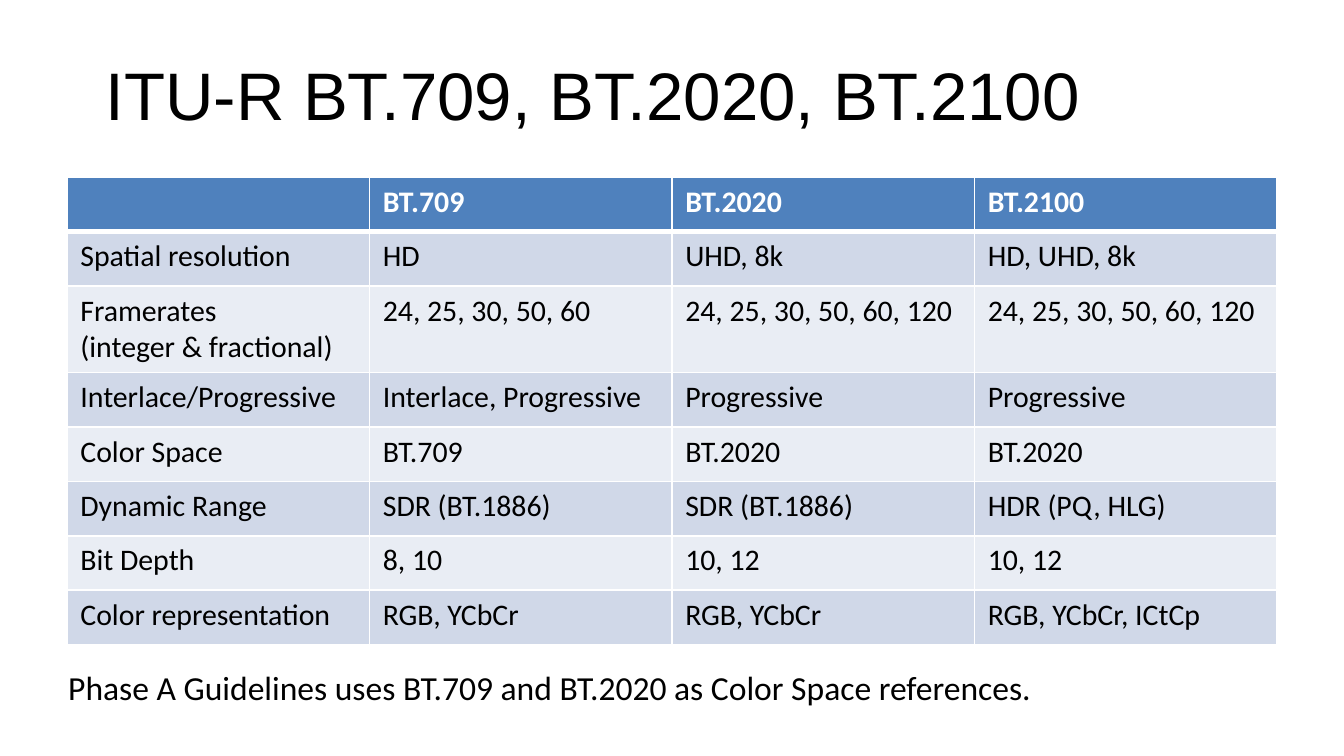
from lxml import etree
from pptx import Presentation
from pptx.dml.color import RGBColor
from pptx.enum.text import MSO_ANCHOR, PP_ALIGN
from pptx.oxml.ns import qn

LEFT, CENTER = PP_ALIGN.LEFT, PP_ALIGN.CENTER
TOP, MIDDLE = MSO_ANCHOR.TOP, MSO_ANCHOR.MIDDLE

# Content
TITLE = "ITU-R BT.709, BT.2020, BT.2100"
ROWS = [
    ("", "BT.709", "BT.2020", "BT.2100"),
    ("Spatial resolution", "HD", "UHD, 8k", "HD, UHD, 8k"),
    ("Framerates \n(integer & fractional)", "24, 25, 30, 50, 60",
     "24, 25, 30, 50, 60, 120", "24, 25, 30, 50, 60, 120"),
    ("Interlace/Progressive", "Interlace, Progressive", "Progressive", "Progressive"),
    ("Color Space", "BT.709", "BT.2020", "BT.2020"),
    ("Dynamic Range", "SDR (BT.1886)", "SDR (BT.1886)", "HDR (PQ, HLG)"),
    ("Bit Depth", "8, 10", "10, 12", "10, 12"),
    ("Color representation", "RGB, YCbCr", "RGB, YCbCr", "RGB, YCbCr, ICtCp"),
]
NOTE = "Phase A Guidelines uses BT.709 and BT.2020 as Color Space references."

THEME = {
    "head": "4F81BD", "bands": ("E9EDF4", "D0D8E8"),
    "ink": "000000", "white": "FFFFFF",
    "title font": "Arial", "body font": "Calibri",
    "title": 36, "cell": 16, "note": 18,
    "thin": 1, "thick": 3,
}

# Places in px: left, top, width, height
SLIDE = (1344, 756)
TITLE_BOX = (67, 31, 1052, 126)
TABLE_BOX = (67, 177, 1210, 436)
NOTE_BOX = (55, 660, 1009, 54)
SCALE = 9144000 / 1344
POINT = 12700


def px(*sizes):
    return [round(size * SCALE) for size in sizes]


def write(frame, text, size, font=THEME["body font"], color=THEME["ink"],
          bold=False, align=LEFT, anchor=TOP, wrap=True):
    frame.word_wrap = wrap
    frame.vertical_anchor = anchor
    para = frame.paragraphs[0]
    para.text = text
    para.alignment = align
    for run in para.runs:
        run.font.size = size * POINT
        run.font.name = font
        run.font.bold = bold
        run.font.color.rgb = RGBColor.from_string(color)
    # A line break carries its own type size
    for brk in para._p.findall(qn("a:br")):
        etree.SubElement(brk, qn("a:rPr"), sz=str(size * 100))


def edge(cell, side, width):
    props = cell._tc.get_or_add_tcPr()
    line = etree.SubElement(props, qn("a:ln" + side), w=str(width * POINT))
    fill = etree.SubElement(line, qn("a:solidFill"))
    etree.SubElement(fill, qn("a:srgbClr"), val=THEME["white"])


def main():
    deck = Presentation()
    deck.slide_width, deck.slide_height = px(*SLIDE)
    slide = deck.slides.add_slide(deck.slide_layouts[5])

    # Title
    title = slide.shapes.title
    title.left, title.top, title.width, title.height = px(*TITLE_BOX)
    write(title.text_frame, TITLE, THEME["title"], font=THEME["title font"],
          align=CENTER, anchor=MIDDLE)

    # Table: equal rows and columns; the two-line row grows to fit
    table = slide.shapes.add_table(len(ROWS), len(ROWS[0]), *px(*TABLE_BOX)).table
    for r, row in enumerate(ROWS):
        head = r == 0
        fill = THEME["head"] if head else THEME["bands"][r % 2]
        heavy = {0: "B", 1: "T"}.get(r)
        for c, text in enumerate(row):
            cell = table.cell(r, c)
            for side in "LRTB":
                edge(cell, side, THEME["thick" if side == heavy else "thin"])
            cell.fill.solid()
            cell.fill.fore_color.rgb = RGBColor.from_string(fill)
            write(cell.text_frame, text, THEME["cell"], bold=head,
                  color=THEME["white" if head else "ink"])

    # Note under the table
    note = slide.shapes.add_textbox(*px(*NOTE_BOX))
    write(note.text_frame, NOTE, THEME["note"], wrap=False)

    deck.save("out.pptx")


if __name__ == "__main__":
    main()
